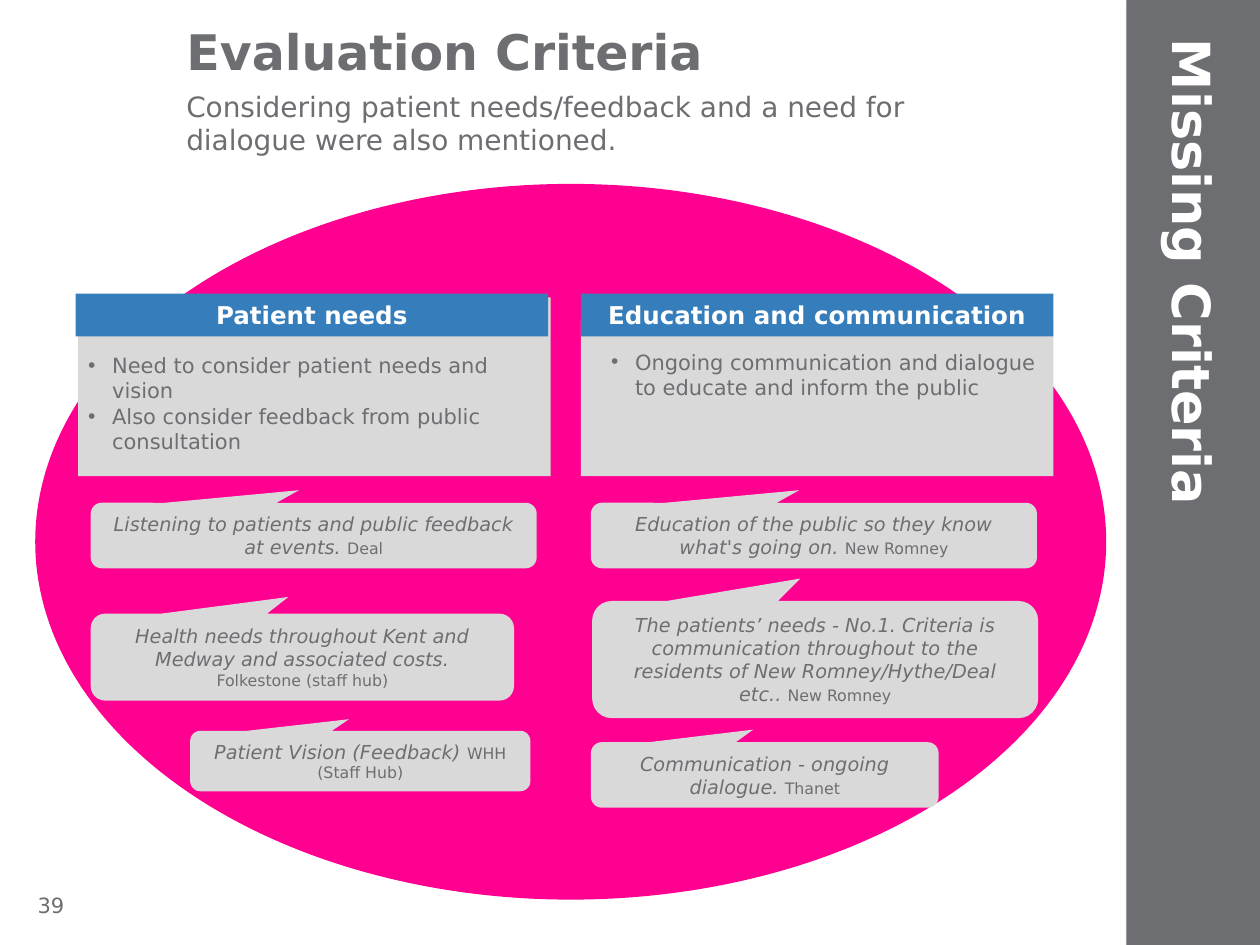
from pptx import Presentation
from pptx.dml.color import RGBColor
from pptx.enum.shapes import MSO_SHAPE
from pptx.enum.text import MSO_ANCHOR, MSO_AUTO_SIZE, PP_ALIGN
from pptx.oxml import parse_xml
from pptx.oxml.ns import nsdecls, qn
from pptx.util import Inches, Pt

COLOURS = {
    "pink": "FF0090",
    "blue": "357DBB",
    "panel": "D9D9D9",
    "grey": "6D6E71",
    "white": "FFFFFF",
}
FONT = "DejaVu Sans"
POINTER = (-0.033, -0.692, 0.167)

# left, top, width, height, quote, source, source on its own line
CALLOUTS = [
    (0.72, 3.99, 3.54, 0.52, "Listening to patients and public feedback at events. ", "Deal", False),
    (0.72, 4.87, 3.36, 0.69, "Health needs throughout Kent and Medway and associated costs.",
     "Folkestone (staff hub)", True),
    (1.51, 5.8, 2.7, 0.48, "Patient Vision (Feedback) ", "WHH (Staff Hub)", False),
    (4.69, 3.99, 3.54, 0.52, "Education of the public so they know what's going on. ",
     "New Romney", False),
    (4.69, 5.89, 2.76, 0.52, "Communication - ongoing dialogue. ", "Thanet", False),
    (4.7, 4.77, 3.54, 0.93, "The patients’ needs - No.1. Criteria is communication throughout "
     "to the residents of New Romney/Hythe/Deal etc.. ", "New Romney", False),
]


class SlideBuilder:
    def __init__(self, slide):
        self.slide = slide

    def format_run(self, run, size, colour="grey", bold=False, italic=False):
        font = run.font
        font.name, font.size, font.bold, font.italic = FONT, Pt(size), bold, italic
        font.color.rgb = RGBColor.from_string(COLOURS[colour])

    def set_text(self, shape, text, size, colour="grey", bold=False,
                 align=PP_ALIGN.LEFT, anchor=MSO_ANCHOR.TOP):
        frame = shape.text_frame
        frame.text = text
        frame.word_wrap = True
        frame.auto_size = MSO_AUTO_SIZE.NONE
        frame.vertical_anchor = anchor
        for paragraph in frame.paragraphs:
            paragraph.alignment = align
            paragraph.space_before = Pt(0)
            for run in paragraph.runs:
                self.format_run(run, size, colour, bold)

    def shape(self, kind, left, top, width, height, fill):
        shape = self.slide.shapes.add_shape(
            kind, Inches(left), Inches(top), Inches(width), Inches(height))
        shape.shadow.inherit = False
        shape.fill.solid()
        shape.fill.fore_color.rgb = RGBColor.from_string(COLOURS[fill])
        shape.line.fill.background()
        return shape

    def text_box(self, left, top, width, height, text, size, **style):
        box = self.slide.shapes.add_textbox(
            Inches(left), Inches(top), Inches(width), Inches(height))
        self.set_text(box, text, size, **style)
        return box

    def placeholder(self, index, left, top, width, height, text, size, **style):
        """Fill a layout placeholder and bring it to the front."""
        shape = self.slide.placeholders[index]
        shape.left, shape.top = Inches(left), Inches(top)
        shape.width, shape.height = Inches(width), Inches(height)
        self.set_text(shape, text, size, **style)
        self.slide.shapes.element.append(shape.element)
        return shape

    def bullets(self, index, left, top, width, height, items):
        shape = self.placeholder(index, left, top, width, height, "\n".join(items), 12)
        for paragraph in shape.text_frame.paragraphs:
            properties = paragraph._p.get_or_add_pPr()
            properties.set("marL", str(Inches(0.4)))
            properties.set("indent", str(Inches(-0.19)))
            properties.append(parse_xml(f'<a:buChar {nsdecls("a")} char="•"/>'))

    def panel(self, left, top, height, header_left, heading):
        self.shape(MSO_SHAPE.RECTANGLE, left, top, 3.75, height, "panel")
        header = self.shape(MSO_SHAPE.RECTANGLE, header_left, 2.33, 3.75, 0.34, "blue")
        self.set_text(header, heading, 14, colour="white", bold=True, align=PP_ALIGN.CENTER)

    def sidebar(self, text):
        bar = self.shape(MSO_SHAPE.RECTANGLE, 8.94, 0, 1.06, 7.5, "grey")
        bar.element.spPr.find(qn("a:effectLst")).append(parse_xml(
            f'<a:outerShdw {nsdecls("a")} blurRad="{Pt(4)}" dist="{Pt(3)}" dir="2700000">'
            '<a:srgbClr val="000000"><a:alpha val="40000"/></a:srgbClr></a:outerShdw>'))
        label = self.text_box(6.22, 3.08, 6.61, 0.87, text, 30, colour="white",
                              bold=True, anchor=MSO_ANCHOR.MIDDLE)
        label.rotation = 90
        paragraph = label.text_frame.paragraphs[0]
        paragraph.line_spacing = 1.2
        paragraph.space_before = paragraph.space_after = Pt(6)

    def callout(self, left, top, width, height, quote, source, own_line):
        shape = self.shape(MSO_SHAPE.ROUNDED_RECTANGULAR_CALLOUT,
                           left, top, width, height, "panel")
        for position, value in enumerate(POINTER):
            shape.adjustments[position] = value
        self.set_text(shape, quote, 11, align=PP_ALIGN.CENTER, anchor=MSO_ANCHOR.MIDDLE)
        frame = shape.text_frame
        paragraph = frame.paragraphs[0]
        paragraph.runs[0].font.italic = True
        if own_line:
            paragraph = frame.add_paragraph()
            paragraph.alignment = PP_ALIGN.CENTER
        run = paragraph.add_run()
        run.text = source
        self.format_run(run, 9)


def main():
    presentation = Presentation()
    presentation.slide_width, presentation.slide_height = Inches(10), Inches(7.5)
    two_content = presentation.slide_layouts[3]
    builder = SlideBuilder(presentation.slides.add_slide(two_content))

    builder.shape(MSO_SHAPE.OVAL, 0.28, 1.46, 8.5, 5.68, "pink")
    builder.text_box(0.2, 6.98, 2.33, 0.4, "39", 12, anchor=MSO_ANCHOR.MIDDLE)

    builder.panel(0.62, 2.36, 1.42, 0.6, "Patient needs")
    builder.panel(4.61, 2.54, 1.24, 4.61, "Education and communication")
    builder.bullets(1, 0.39, 2.75, 3.97, 0.91, [
        "Need to consider patient needs and vision",
        "Also consider feedback from public consultation",
    ])
    builder.bullets(2, 4.54, 2.72, 3.97, 0.5, [
        "Ongoing communication and dialogue to educate and inform the public",
    ])

    builder.placeholder(0, 1.38, 0.12, 6.14, 0.57, "Evaluation Criteria", 28, bold=True)
    builder.text_box(
        1.38, 0.66, 6.62, 0.64,
        "Considering patient needs/feedback and a need for dialogue were also mentioned.", 16)
    builder.sidebar("Missing Criteria")

    for callout in CALLOUTS:
        builder.callout(*callout)

    presentation.save("out.pptx")


if __name__ == "__main__":
    main()
